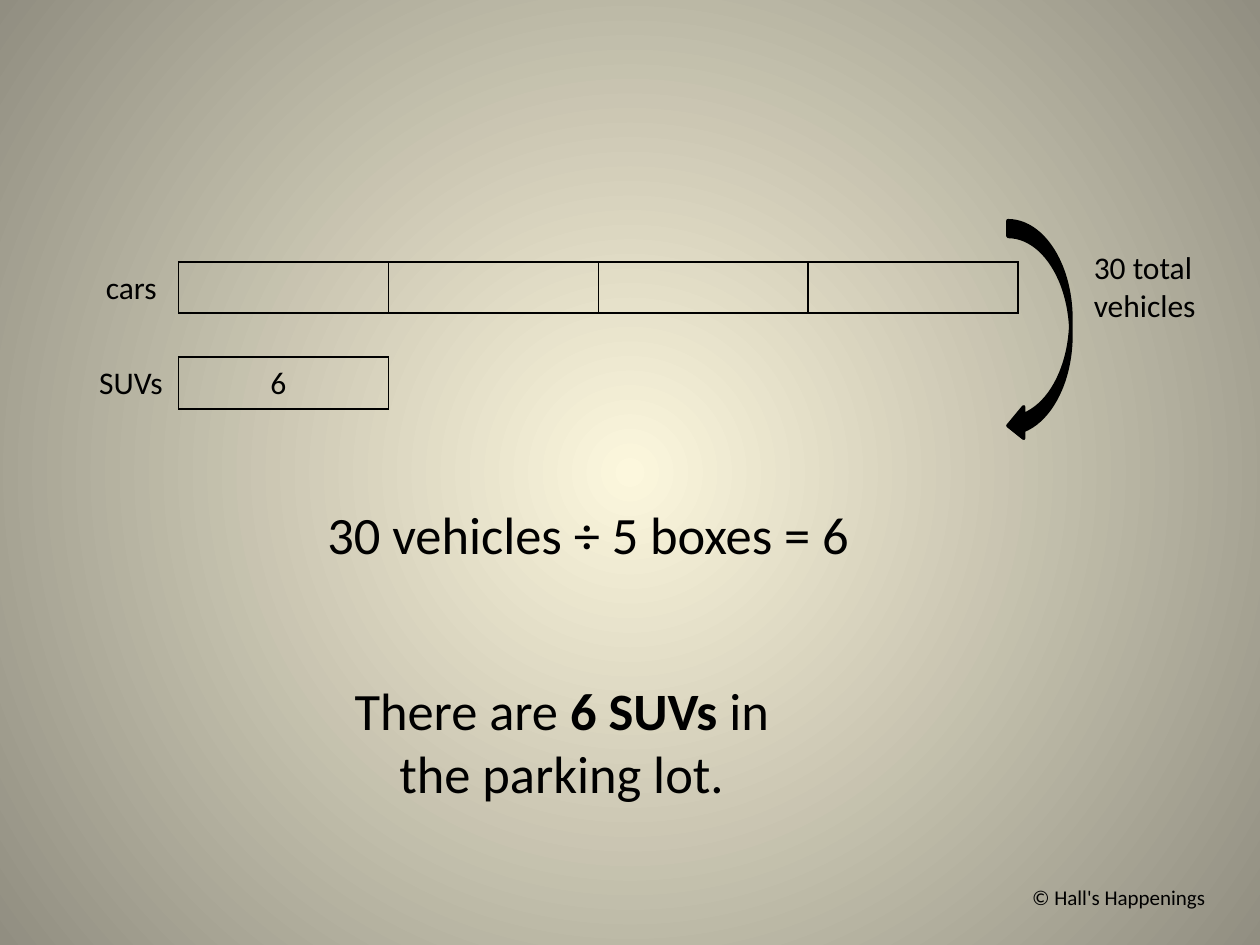
"""Build a bar-model slide that solves a word problem about cars and SUVs."""
from dataclasses import dataclass

import lxml.etree
import pptx
import pptx.dml.color
import pptx.enum.shapes
import pptx.enum.text
import pptx.oxml
import pptx.oxml.ns
import pptx.slide
import pptx.util
from pptx.util import Cm

BLACK = pptx.dml.color.RGBColor(0x00, 0x00, 0x00)
CREAM = pptx.dml.color.RGBColor(0xFC, 0xF7, 0xDD)
STONE = pptx.dml.color.RGBColor(0x91, 0x8E, 0x81)
FONT = "Calibri"
BOX_WIDTH = 4.23
BARS_LEFT = 3.6
CARS_TOP = 5.28
SUVS_TOP = 7.2
ALIGN = pptx.enum.text.PP_ALIGN
ANCHOR = pptx.enum.text.MSO_ANCHOR
AUTO_SIZE = pptx.enum.text.MSO_AUTO_SIZE


@dataclass(frozen=True)
class Span:
    text: str
    bold: bool = False


@dataclass(frozen=True)
class Label:
    left: float
    top: float
    width: float
    height: float
    spans: tuple[Span, ...]
    size: int = 18
    align: ALIGN = ALIGN.LEFT
    anchor: ANCHOR = ANCHOR.TOP
    grows: bool = True


@dataclass(frozen=True)
class Bar:
    top: float
    height: float
    boxes: int


BARS = (Bar(CARS_TOP, 1.02, 4), Bar(SUVS_TOP, 1.04, 1))
LABELS = (
    Label(1.07, CARS_TOP, 2.34, 1.02, (Span("cars"),), align=ALIGN.RIGHT),
    Label(0.99, SUVS_TOP, 2.54, 1.02, (Span("SUVs"),), align=ALIGN.RIGHT),
    Label(21.8, 4.87, 2.75, 1.8, (Span("30 total vehicles"),)),
    Label(6.35, 10, 11.43, 1.55, (Span("30 vehicles ÷ 5 boxes = 6"),), size=30),
    Label(4.87, SUVS_TOP, 1.48, 1.02, (Span("6"),), align=ALIGN.CENTER),
    Label(
        6.35, 13.55, 9.95, 2.82,
        (Span("There are "), Span("6 SUVs ", bold=True), Span("in the parking lot.")),
        size=30, align=ALIGN.CENTER,
    ),
    Label(
        16.5, 17.57, 8.05, 1.02, (Span("© Hall's Happenings"),),
        size=12, align=ALIGN.RIGHT, anchor=ANCHOR.MIDDLE, grows=False,
    ),
)


def paint_background(page: pptx.slide.Slide) -> None:
    """Fill the page with a circular gradient from its centre."""
    page.background.fill.solid()
    solid = page.element.find(".//" + pptx.oxml.ns.qn("p:bgPr"))[0]
    gradient = pptx.oxml.parse_xml(
        f'<a:gradFill {pptx.oxml.ns.nsdecls("a")} rotWithShape="1"><a:gsLst>'
        f'<a:gs pos="0"><a:srgbClr val="{CREAM}"/></a:gs>'
        f'<a:gs pos="100000"><a:srgbClr val="{STONE}"/></a:gs></a:gsLst>'
        '<a:path path="circle">'
        '<a:fillToRect l="50000" t="50000" r="50000" b="50000"/></a:path></a:gradFill>'
    )
    solid.getparent().replace(solid, gradient)


def draw_bar(page: pptx.slide.Slide, bar: Bar) -> None:
    """Draw a row of equal, unfilled boxes as a table."""
    frame = page.shapes.add_table(
        1, bar.boxes, Cm(BARS_LEFT), Cm(bar.top), Cm(BOX_WIDTH * bar.boxes), Cm(bar.height)
    )
    table = frame.table
    table.first_row = False
    table.horz_banding = False
    for cell in table.iter_cells():
        properties = cell._tc.get_or_add_tcPr()
        for side in ("lnL", "lnR", "lnT", "lnB"):
            properties.append(pptx.oxml.parse_xml(
                f'<a:{side} {pptx.oxml.ns.nsdecls("a")} w="{pptx.util.Pt(1)}">'
                f'<a:solidFill><a:srgbClr val="{BLACK}"/></a:solidFill></a:{side}>'
            ))
        cell.fill.background()


def draw_label(page: pptx.slide.Slide, label: Label) -> None:
    """Draw a wrapped text box."""
    box = page.shapes.add_textbox(
        Cm(label.left), Cm(label.top), Cm(label.width), Cm(label.height)
    )
    frame = box.text_frame
    frame.word_wrap = True
    frame.vertical_anchor = label.anchor
    frame.auto_size = AUTO_SIZE.SHAPE_TO_FIT_TEXT if label.grows else AUTO_SIZE.NONE
    para = frame.paragraphs[0]
    para.alignment = label.align
    for span in label.spans:
        run = para.add_run()
        run.text = span.text
        run.font.name = FONT
        run.font.size = pptx.util.Pt(label.size)
        run.font.bold = span.bold
        run.font.color.rgb = BLACK


def draw_total_arrow(page: pptx.slide.Slide) -> None:
    """Draw the curved arrow that joins both bars into one total."""
    arrow = page.shapes.add_shape(
        pptx.enum.shapes.MSO_SHAPE.CURVED_LEFT_ARROW, Cm(20.32), Cm(4.45), Cm(1.27), Cm(4.45)
    )
    arrow.shadow.inherit = False
    arrow.fill.solid()
    arrow.fill.fore_color.rgb = BLACK
    arrow.line.color.rgb = BLACK
    arrow.line.width = pptx.util.Pt(2)


def main() -> None:
    """Assemble and save the deck."""
    deck = pptx.Presentation()
    deck.slide_width, deck.slide_height = Cm(25.4), Cm(19.05)
    page = deck.slides.add_slide(deck.slide_layouts.get_by_name("Blank"))
    paint_background(page)
    for bar in BARS:
        draw_bar(page, bar)
    draw_total_arrow(page)
    for label in LABELS:
        draw_label(page, label)
    deck.save("out.pptx")


if __name__ == "__main__":
    main()
